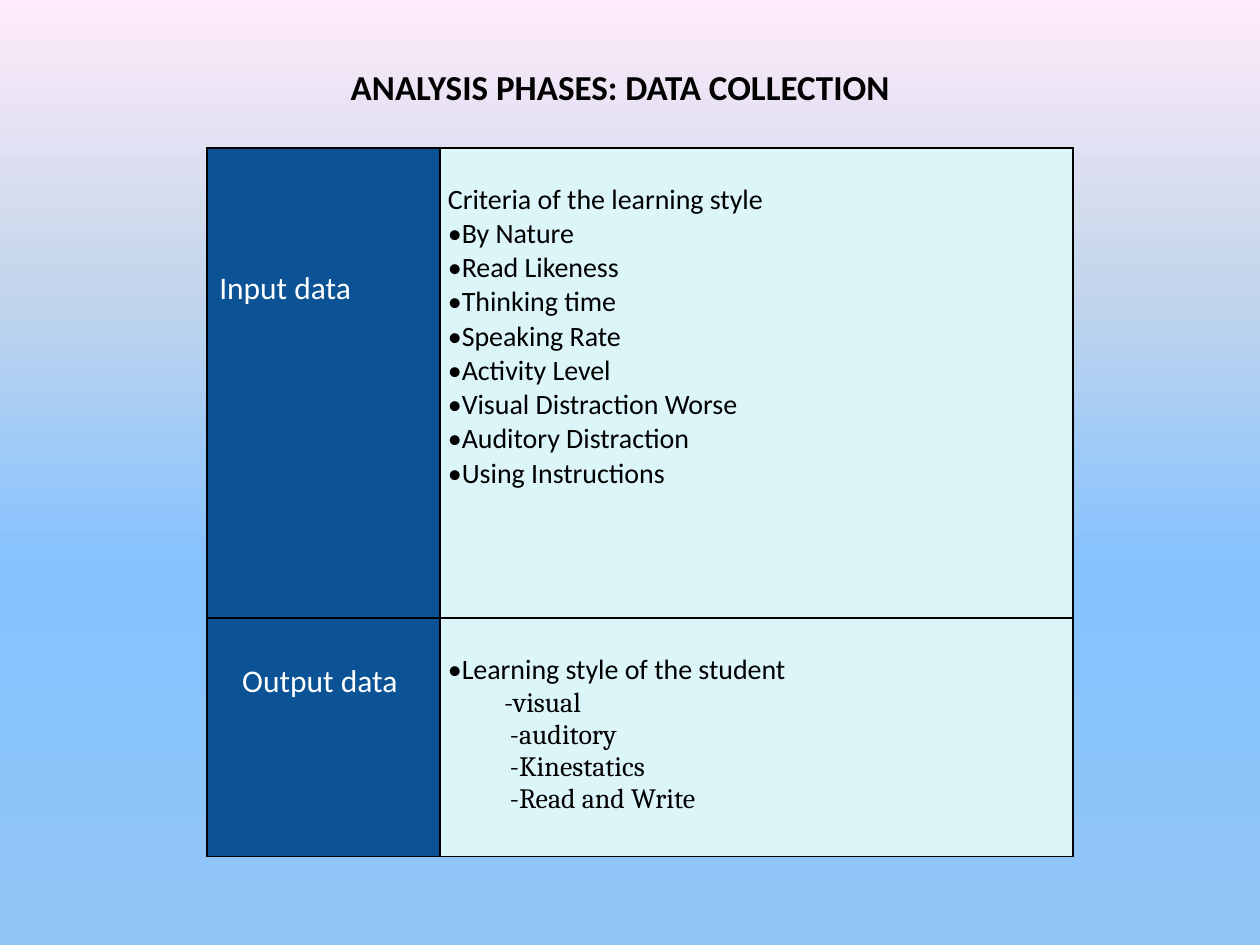
from lxml import etree
from pptx import Presentation
from pptx import util as u
from pptx.dml import color
from pptx.enum import text
from pptx.oxml import ns

COLORS = {"ink": "000000", "white": "FFFFFF", "label": "0B5394", "content": "DBF5F9"}
BACKGROUND_STOPS = [(0, "91C6F7"), (40, "85C2FF"), (70, "C4D6EB"), (100, "FFEBFA")]
CRITERIA = ["By Nature", "Read Likeness", "Thinking time", "Speaking Rate", "Activity Level",
            "Visual Distraction Worse", "Auditory Distraction", "Using Instructions"]
STYLES = [("-visual", 1.13), ("-auditory", 1.25), ("-Kinestatics", 1.25),
          ("-Read and Write", 1.25)]


def child(parent, tag, **attributes):
    return etree.SubElement(parent, ns.qn(tag), attributes)


def paint_background(slide):
    fill = slide.background.fill
    fill.gradient()
    fill.gradient_angle = 90
    stops = slide.element.find(".//" + ns.qn("a:gsLst"))
    for stop in list(stops):
        stops.remove(stop)
    for position, value in BACKGROUND_STOPS:
        stop = child(stops, "a:gs", pos=str(position * 1000))
        child(stop, "a:srgbClr", val=value)


def add_run(paragraph, words, size, ink="ink", font="Calibri", bold=False):
    run = paragraph.add_run()
    run.text = words
    run.font.size = u.Pt(size)
    run.font.name = font
    run.font.bold = bold
    run.font.color.rgb = color.RGBColor.from_string(COLORS[ink])


def indent(paragraph, left=0, bullet=None):
    properties = paragraph._p.get_or_add_pPr()
    properties.set("marL", str(u.Cm(left)))
    properties.set("indent", "0")
    if bullet:
        child(properties, "a:buFont", typeface="Calibri")
        child(properties, "a:buChar", char=bullet)


def style_cell(cell, fill, top, side):
    cell.fill.solid()
    cell.fill.fore_color.rgb = color.RGBColor.from_string(COLORS[fill])
    cell.margin_left = cell.margin_right = u.Cm(side)
    cell.margin_top, cell.margin_bottom = u.Cm(top), 0
    cell.vertical_anchor = text.MSO_ANCHOR.TOP
    properties = cell._tc.get_or_add_tcPr()
    for index, edge in enumerate(("a:lnL", "a:lnR", "a:lnT", "a:lnB")):
        line = etree.Element(ns.qn(edge), w=str(u.Pt(1)))
        child(child(line, "a:solidFill"), "a:srgbClr", val=COLORS["ink"])
        properties.insert(index, line)


def fill_label(cell, words, top, alignment):
    style_cell(cell, "label", top, 0.25)
    paragraph = cell.text_frame.paragraphs[0]
    paragraph.alignment = alignment
    add_run(paragraph, words, 18, "white")


def fill_content(cell, lines):
    """Each line is (words, left indent in cm, bullet, font)."""
    style_cell(cell, "content", 0.7, 0.16)
    frame = cell.text_frame
    for index, (words, left, bullet, font) in enumerate(lines):
        paragraph = frame.add_paragraph() if index else frame.paragraphs[0]
        indent(paragraph, left, bullet)
        add_run(paragraph, words, 16, font=font)


def add_title(slide, left, top, width, height):
    box = slide.shapes.add_textbox(u.Cm(left), u.Cm(top), u.Cm(width), u.Cm(height))
    box.text_frame.word_wrap = True
    paragraph = box.text_frame.paragraphs[0]
    paragraph.alignment = text.PP_ALIGN.CENTER
    add_run(paragraph, "ANALYSIS PHASES: DATA COLLECTION", 20, bold=True)


def add_data_table(slide, left, top, width, height):
    frame = slide.shapes.add_table(2, 2, u.Cm(left), u.Cm(top), u.Cm(width), u.Cm(height))
    table = frame.table
    table.first_row = table.horz_banding = False
    label_width, input_height = 4.7, 9.48
    for column, size in zip(table.columns, (label_width, width - label_width)):
        column.width = u.Cm(size)
    for row, size in zip(table.rows, (input_height, height - input_height)):
        row.height = u.Cm(size)

    fill_label(table.cell(0, 0), "Input data", 2.46, text.PP_ALIGN.LEFT)
    fill_label(table.cell(1, 0), "Output data ", 0.9, text.PP_ALIGN.CENTER)
    fill_content(table.cell(0, 1),
                 [("Criteria of the learning style", 0, None, "Calibri")]
                 + [(words, 0, "•", "Calibri") for words in CRITERIA])
    fill_content(table.cell(1, 1),
                 [("Learning style of the student", 0, "•", "Calibri")]
                 + [(words, left_indent, None, "Cambria") for words, left_indent in STYLES])


def main():
    presentation = Presentation()
    presentation.slide_width, presentation.slide_height = u.Cm(25.4), u.Cm(19.05)
    slide = presentation.slides.add_slide(presentation.slide_layouts[6])
    paint_background(slide)
    add_title(slide, 5.95, 1.19, 13.11, 1.12)
    add_data_table(slide, 4.17, 2.98, 17.46, 14.29)
    presentation.save("out.pptx")


if __name__ == "__main__":
    main()
